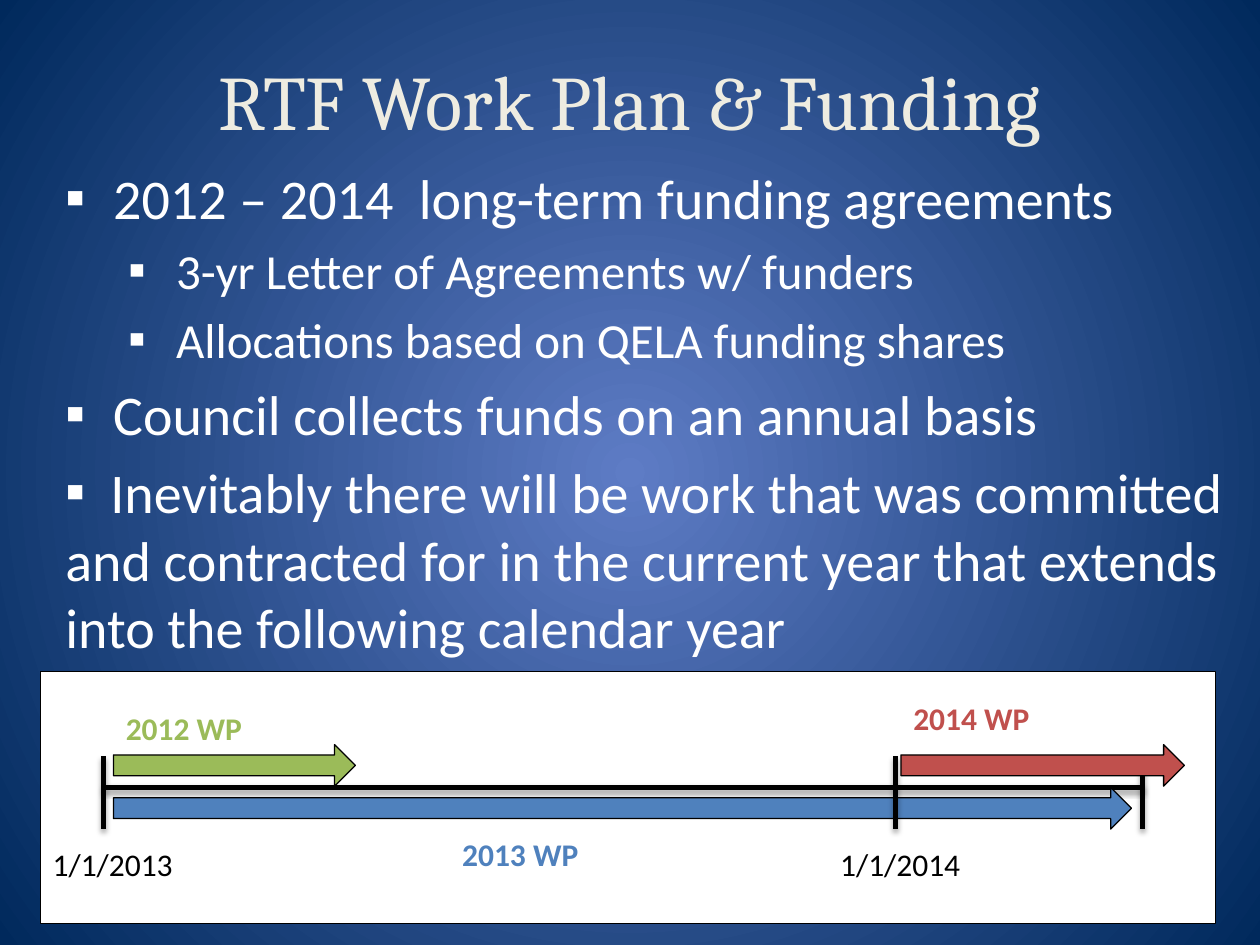
from lxml.etree import SubElement
from pptx import Presentation
from pptx.dml.color import RGBColor
from pptx.enum.shapes import MSO_CONNECTOR, MSO_SHAPE
from pptx.enum.text import MSO_ANCHOR, PP_ALIGN
from pptx.oxml.ns import qn
from pptx.util import Inches, Pt

COLORS = {
    "center": "5E7CC5", "edge": "00295C", "title": "EEECE1",
    "white": "FFFFFF", "black": "000000",
    "green": "9BBB59", "blue": "4F81BD", "red": "C0504D",
}

# text, level, left margin, first-line indent
BULLETS = [
    ("2012 – 2014  long-term funding agreements", 0, 0.38, -0.38),
    ("3-yr Letter of Agreements w/ funders", 1, 0.88, -0.38),
    ("Allocations based on QELA funding shares", 1, 0.88, -0.38),
    ("Council collects funds on an annual basis", 0, 0.38, -0.38),
    ("  Inevitably there will be work that was committed and contracted for "
     "in the current year that extends into the following calendar year", 0, 0, 0),
]
LEVEL_SIZES = [32, 28]

AXIS_Y = 6.25
AXIS_START, YEAR_END, AXIS_END = 0.82, 7.11, 9.07
TICK_TOP, TICK_BOTTOM = 6, 6.58

# left, top, width, color
ARROWS = [
    (0.9, 5.91, 1.92, "green"),
    (0.9, AXIS_Y, 8.08, "blue"),
    (7.15, 5.91, 2.25, "red"),
]
# text, left, top, color, bold
LABELS = [
    ("1/1/2013", 0.32, 6.66, "black", False),
    ("1/1/2014", 6.57, 6.66, "black", False),
    ("2012 WP", 0.9, 5.58, "green", True),
    ("2013 WP", 3.57, 6.58, "blue", True),
    ("2014 WP", 7.15, 5.5, "red", True),
]


def rgb(name):
    return RGBColor.from_string(COLORS[name])


def paint_background(page):
    """Fill the page with a gradient that spreads from its center."""
    fill = page.background.fill
    fill.gradient()
    for stop, name in zip(fill.gradient_stops, ("center", "edge")):
        stop.color.rgb = rgb(name)
    gradient = page.element.find(".//" + qn("a:gradFill"))
    gradient.remove(gradient.find(qn("a:lin")))
    circle = SubElement(gradient, qn("a:path"), path="circle")
    SubElement(circle, qn("a:fillToRect"), l="50000", t="50000", r="50000", b="50000")


def add_span(para, text, size, color="white", font="Calibri", bold=False):
    span = para.add_run()
    span.text = text
    span.font.name = font
    span.font.size = Pt(size)
    span.font.bold = bold
    span.font.color.rgb = rgb(color)


def write_title(page, text):
    title = page.shapes.title
    title.left, title.top = Inches(0.5), Inches(0.17)
    title.width, title.height = Inches(9), Inches(1.25)
    title.text_frame.vertical_anchor = MSO_ANCHOR.MIDDLE
    para = title.text_frame.paragraphs[0]
    para.alignment = PP_ALIGN.CENTER
    add_span(para, text, 44, color="title", font="Cambria")


def add_bullets(page):
    box = page.shapes.add_textbox(Inches(0.42), Inches(1.25), Inches(9.42), Inches(5.2))
    frame = box.text_frame
    frame.word_wrap = True
    for index, (text, level, margin, indent) in enumerate(BULLETS):
        para = frame.add_paragraph() if index else frame.paragraphs[0]
        size = LEVEL_SIZES[level]
        para.level = level
        para.space_before = Pt(0.2 * size)
        properties = para._p.get_or_add_pPr()
        properties.set("marL", str(Inches(margin)))
        properties.set("indent", str(Inches(indent)))
        SubElement(properties, qn("a:buFont"), typeface="Calibri")
        SubElement(properties, qn("a:buChar"), char="▪")
        add_span(para, text, size)


def add_outlined(group, kind, left, top, width, height, color):
    shape = group.shapes.add_shape(
        kind, Inches(left), Inches(top), Inches(width), Inches(height))
    shape.shadow.inherit = False
    shape.fill.solid()
    shape.fill.fore_color.rgb = rgb(color)
    shape.line.color.rgb = rgb("black")
    shape.line.width = Pt(0.75)


def add_line(group, x1, y1, x2, y2):
    """Draw a thick black line with a soft shadow below it."""
    line = group.shapes.add_connector(
        MSO_CONNECTOR.STRAIGHT, Inches(x1), Inches(y1), Inches(x2), Inches(y2))
    line.line.color.rgb = rgb("black")
    line.line.width = Pt(3)
    effects = SubElement(line._element.spPr, qn("a:effectLst"))
    shadow = SubElement(effects, qn("a:outerShdw"), blurRad=str(Pt(3.1)),
                        dist=str(Pt(1.8)), dir="5400000", rotWithShape="0")
    shade = SubElement(shadow, qn("a:srgbClr"), val=COLORS["black"])
    SubElement(shade, qn("a:alpha"), val="35000")


def add_label(group, text, left, top, color, bold):
    box = group.shapes.add_textbox(Inches(left), Inches(top), Inches(1.17), Inches(0.42))
    box.text_frame.word_wrap = False
    add_span(box.text_frame.paragraphs[0], text, 18, color=color, bold=bold)


def add_timeline(page):
    group = page.shapes.add_group_shape()
    add_outlined(group, MSO_SHAPE.RECTANGLE, 0.32, 5.33, 9.33, 2, "white")
    add_line(group, AXIS_START, AXIS_Y, AXIS_END, AXIS_Y)
    for x in (AXIS_START, AXIS_END):
        add_line(group, x, TICK_TOP, x, TICK_BOTTOM)
    for left, top, width, color in ARROWS:
        add_outlined(group, MSO_SHAPE.RIGHT_ARROW, left, top, width, 0.33, color)
    add_line(group, YEAR_END, TICK_TOP, YEAR_END, TICK_BOTTOM)
    for label in LABELS:
        add_label(group, *label)


def main():
    deck = Presentation()
    deck.slide_width, deck.slide_height = Inches(10), Inches(7.5)
    page = deck.slides.add_slide(deck.slide_layouts.get_by_name("Title Only"))
    paint_background(page)
    write_title(page, "RTF Work Plan & Funding")
    add_bullets(page)
    add_timeline(page)
    deck.save("out.pptx")


if __name__ == "__main__":
    main()
